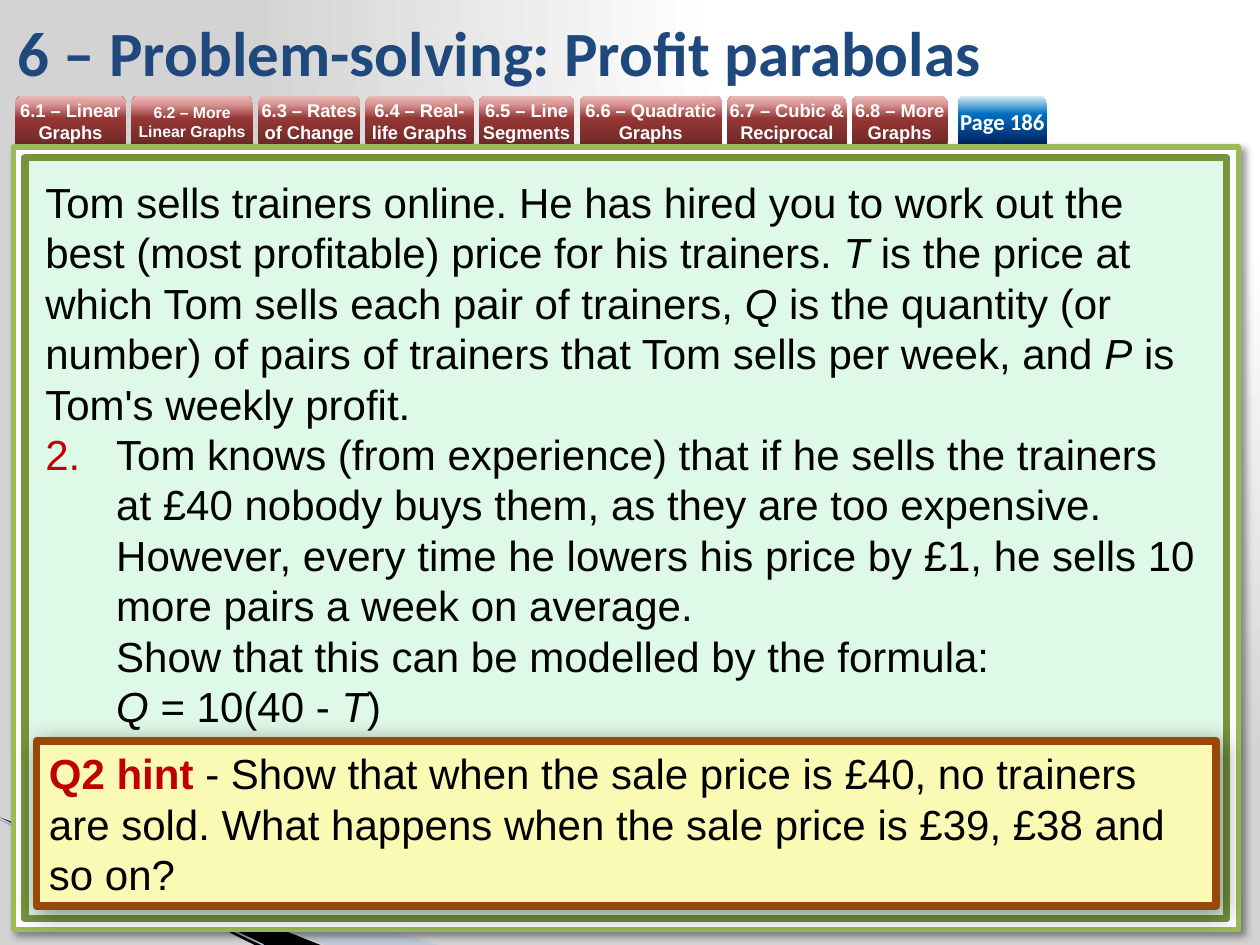
from copy import deepcopy
from dataclasses import dataclass

from lxml import etree
from pptx import Presentation
from pptx.dml.color import RGBColor
from pptx.enum import shapes, text
from pptx.oxml import ns
from pptx.util import Pt

RECT = shapes.MSO_SHAPE.RECTANGLE
TAB = shapes.MSO_SHAPE.ROUND_2_SAME_RECTANGLE


@dataclass(frozen=True)
class Theme:
    black: str = "000000"
    white: str = "FFFFFF"
    title: str = "1F497D"
    accent: str = "C00000"
    frame: str = "9BBB59"
    panel: str = "DFF9E8"
    panel_line: str = "77933C"
    hint: str = "FAFAB4"
    hint_line: str = "984807"
    swoosh: str = "A7B9DB"
    swoosh_line: str = "9EB3D6"
    background: tuple = ((0, "FFFFFF"), (40, "FFFFFF"), (100, "D3D3D3"))
    lesson_tab: tuple = ((0, "6F2927"), (54, "953735"), (83, "D99694"), (100, "E6B9B8"))
    page_tab: tuple = ((0, "002060"), (63, "0070C0"), (100, "DBEEF4"))
    body_font: str = "Arial"
    title_font: str = "Calibri"
    title_size: float = 36
    body_size: float = 24
    page_size: float = 13
    tab_size: float = 10.5
    small_tab_size: float = 9


T = Theme()
UPWARD = '<a:lin ang="16200000" scaled="0"/>'
FROM_TOP_RIGHT = '<a:path path="circle"><a:fillToRect l="65000" b="98000"/></a:path>'


def append_xml(parent, xml):
    wrapper = etree.fromstring(f"<x {ns.nsdecls('a')}>{xml}</x>")
    for child in list(wrapper):
        parent.append(child)


def set_gradient(fill, element, stops, direction):
    fill.gradient()
    grad = element.find(".//" + ns.qn("a:gradFill"))
    for child in list(grad):
        grad.remove(child)
    marks = "".join(f'<a:gs pos="{pos * 1000}"><a:srgbClr val="{color}"/></a:gs>'
                    for pos, color in stops)
    append_xml(grad, f"<a:gsLst>{marks}</a:gsLst>{direction}")


def set_shadow(sp, blur, distance=3):
    sp.shadow.inherit = False
    effects = sp._element.spPr.find(ns.qn("a:effectLst"))
    append_xml(effects, f'<a:outerShdw blurRad="{Pt(blur)}" dist="{Pt(distance)}" dir="2700000" '
                        'algn="tl" rotWithShape="0"><a:srgbClr val="000000">'
                        '<a:alpha val="40000"/></a:srgbClr></a:outerShdw>')


def paint(sp, fill, line=None, width=0):
    sp.shadow.inherit = False
    sp.fill.solid()
    sp.fill.fore_color.rgb = RGBColor.from_string(fill)
    if line:
        sp.line.color.rgb = RGBColor.from_string(line)
        sp.line.width = Pt(width)
    else:
        sp.line.fill.background()


def add_shape(s, kind, box):
    return s.shapes.add_shape(kind, *map(Pt, box))


def add_text(p, content, font=T.body_font, size=T.body_size, color=T.black,
             bold=False, italic=False):
    """Append a run to p; each newline becomes a line break of the same size."""
    for i, line in enumerate(content.split("\n")):
        if i:
            p.add_line_break()
            p._p[-1].append(deepcopy(r._r.rPr))
        if line or not i:
            r = p.add_run()
            r.text = line
            r.font.name, r.font.size = font, Pt(size)
            r.font.bold, r.font.italic = bold, italic
            r.font.color.rgb = RGBColor.from_string(color)


def frame_text(sp, anchor, margin=None):
    tf = sp.text_frame
    tf.word_wrap = True
    tf.auto_size = text.MSO_AUTO_SIZE.NONE
    tf.vertical_anchor = anchor
    if margin is not None:
        tf.margin_left = tf.margin_right = tf.margin_top = tf.margin_bottom = Pt(margin)
    return tf


def place_placeholder(s, ph, box):
    """Move a placeholder to box, in front of everything drawn so far."""
    ph.left, ph.top, ph.width, ph.height = map(Pt, box)
    s.shapes._spTree.append(ph._element)


def draw_swoosh(s, box):
    left, top, width, height = box

    def at(x, y):
        return Pt(left + x * width), Pt(top + y * height)

    for tip, heel, color, alpha in ((1, 0.74, T.swoosh, 40), (0.73, 0.58, T.black, 100)):
        builder = s.shapes.build_freeform(*at(0, 0))
        builder.add_line_segments([at(tip, 1), at(heel, 1)])
        sp = builder.convert_to_shape()
        paint(sp, color)
        append_xml(sp._element.find(".//" + ns.qn("a:srgbClr")),
                   f'<a:alpha val="{alpha * 1000}"/>')
    line = s.shapes.add_connector(shapes.MSO_CONNECTOR.STRAIGHT, *at(0, 0.02), *at(0.6, 1))
    line.line.color.rgb = RGBColor.from_string(T.swoosh_line)
    line.line.width = Pt(0.95)
    append_xml(line._element.spPr, "<a:effectLst/>")


def draw_tab(s, box, label, stops, **fmt):
    sp = add_shape(s, TAB, box)
    paint(sp, T.white)
    set_gradient(sp.fill, sp._element, stops, UPWARD)
    p = frame_text(sp, text.MSO_ANCHOR.MIDDLE, 0).paragraphs[0]
    p.alignment = text.PP_ALIGN.CENTER
    add_text(p, label, color=T.white, bold=True, **fmt)


def draw_tab_bar(s, box):
    left, top, width, height = box
    tabs = (("6.1 – Linear Graphs", 63.4, T.tab_size),
            ("6.2 – More Linear Graphs", 69.8, T.small_tab_size),
            ("6.3 – Rates of Change", 58.3, T.tab_size),
            ("6.4 – Real-life Graphs", 61.9, T.tab_size),
            ("6.5 – Line Segments", 54.7, T.tab_size),
            ("6.6 – Quadratic Graphs", 81.4, T.tab_size),
            ("6.7 – Cubic & Reciprocal", 68.4, T.tab_size),
            ("6.8 – More Graphs", 54.7, T.tab_size))
    x = left
    for label, tab_width, size in tabs:
        draw_tab(s, (x, top, tab_width, height), label, T.lesson_tab, size=size)
        x += tab_width + 2.9
    page_width = 51
    draw_tab(s, (left + width - page_width, top, page_width, height), "Page 186",
             T.page_tab, font=T.title_font, size=T.page_size)


def draw_panel(s, box):
    left, top, width, height = box
    frame = add_shape(s, RECT, box)
    paint(frame, T.white, T.frame, 3)
    set_shadow(frame, 4)
    inner = add_shape(s, RECT, (left + 6.5, top + 6, width - 13.5, height - 12))
    paint(inner, T.panel, T.panel_line, 4.33)


def fill_title(s, box):
    ph = s.shapes.title
    place_placeholder(s, ph, box)
    p = frame_text(ph, text.MSO_ANCHOR.MIDDLE).paragraphs[0]
    p.alignment = text.PP_ALIGN.LEFT
    add_text(p, "6 – Problem-solving: Profit parabolas", font=T.title_font,
             size=T.title_size, color=T.title, bold=True)


def fill_question(s, box):
    ph = s.placeholders[1]
    place_placeholder(s, ph, box)
    tf = frame_text(ph, text.MSO_ANCHOR.TOP)
    intro, question = tf.paragraphs[0], tf.add_paragraph()
    number = (f'<a:buClr><a:srgbClr val="{T.accent}"/></a:buClr>'
              f'<a:buFont typeface="{T.body_font}"/><a:buAutoNum type="arabicPeriod" startAt="2"/>')
    for p, indent, bullet in ((intro, 0, "<a:buNone/>"), (question, 40.5, number)):
        p.space_before = Pt(0)
        pPr = p._p.get_or_add_pPr()
        pPr.set("marL", str(Pt(indent)))
        pPr.set("indent", str(-Pt(indent)))
        append_xml(pPr, bullet)

    intro_parts = (
        "Tom sells trainers online. He has hired you to work out the best (most profitable) "
        "price for his trainers. ", "T", " is the price at which Tom sells each pair of trainers, ",
        "Q", " is the quantity (or number) of pairs of trainers that Tom sells per week, and ",
        "P", " is Tom's weekly profit.")
    question_parts = (
        "Tom knows (from experience) that if he sells the trainers at £40 nobody buys them, "
        "as they are too expensive.\nHowever, every time he lowers his price by £1, he sells 10 "
        "more pairs a week on average.\nShow that this can be modelled by the formula:\n",
        "Q ", "= 10(40 - ", "T", ")")
    for p, parts in ((intro, intro_parts), (question, question_parts)):
        for i, part in enumerate(parts):
            add_text(p, part, italic=i % 2 == 1)


def draw_hint(s, box):
    sp = add_shape(s, RECT, box)
    paint(sp, T.hint, T.hint_line, 4.33)
    set_shadow(sp, 13)
    p = frame_text(sp, text.MSO_ANCHOR.MIDDLE).paragraphs[0]
    p.alignment = text.PP_ALIGN.LEFT
    add_text(p, "Q2 hint", color=T.accent, bold=True)
    add_text(p, " - Show that when the sale price is £40, no trainers are sold. "
                "What happens when the sale price is £39, £38 and so on?")


def main():
    prs = Presentation()
    prs.slide_width, prs.slide_height = Pt(720), Pt(540)
    s = prs.slides.add_slide(prs.slide_layouts[1])
    set_gradient(s.background.fill, s._element, T.background, FROM_TOP_RIGHT)
    draw_swoosh(s, (0, 467, 251, 73))
    draw_tab_bar(s, (8.6, 54.7, 589.6, 28))
    draw_panel(s, (7.9, 84, 700, 447))
    fill_title(s, (2.9, 3.6, 595.4, 51))
    fill_question(s, (18.7, 97.2, 676, 327))
    draw_hint(s, (20.9, 423.4, 674, 94.3))
    prs.save("out.pptx")


if __name__ == "__main__":
    main()
